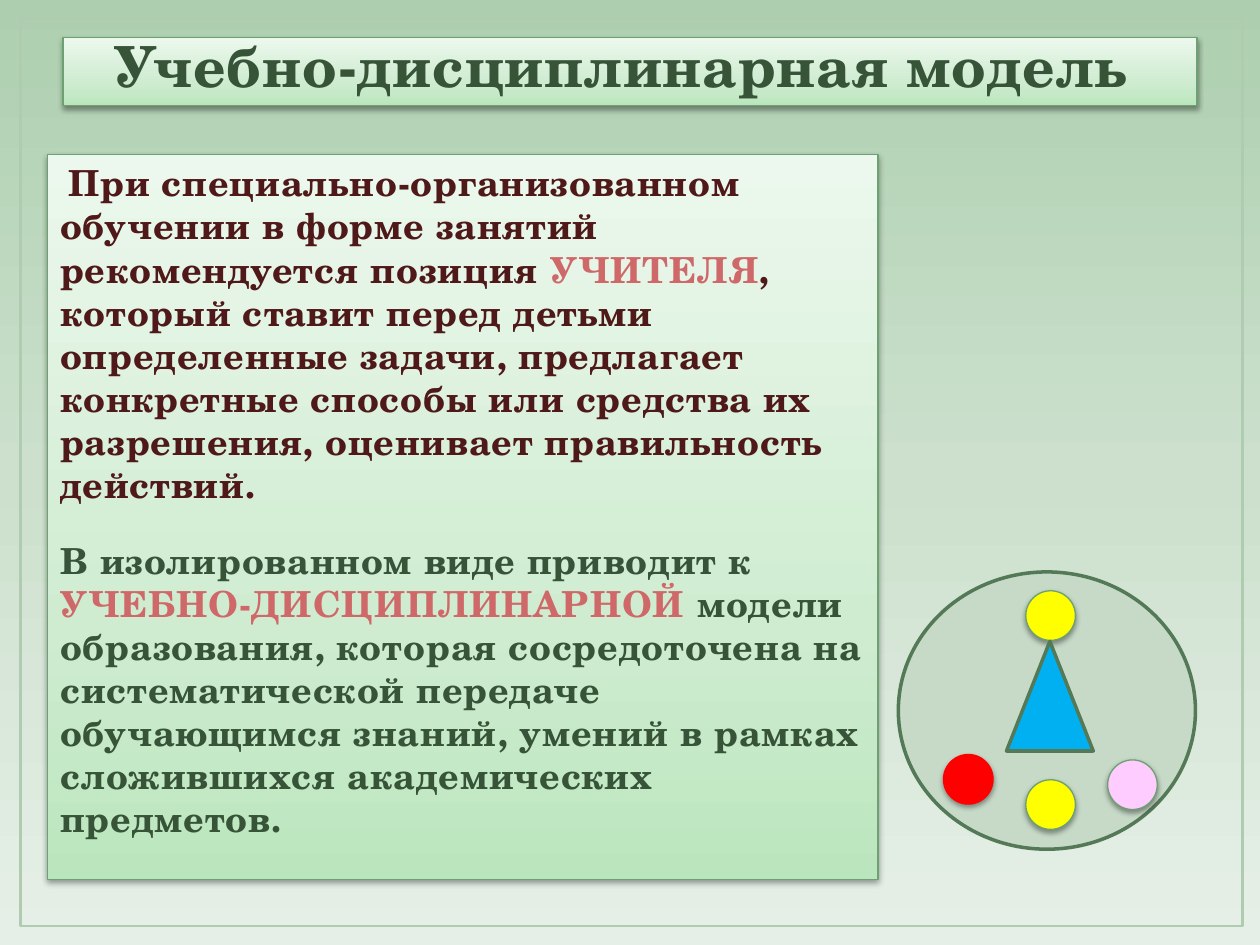
from dataclasses import dataclass

from lxml import etree
from pptx import Presentation
from pptx.dml.color import RGBColor
from pptx.enum.shapes import MSO_SHAPE
from pptx.enum.text import MSO_ANCHOR, MSO_AUTO_SIZE, PP_ALIGN
from pptx.oxml.ns import qn
from pptx.util import Cm, Pt

RECTANGLE, OVAL = MSO_SHAPE.RECTANGLE, MSO_SHAPE.OVAL
TRIANGLE, CONNECTOR = MSO_SHAPE.ISOSCELES_TRIANGLE, MSO_SHAPE.FLOWCHART_CONNECTOR
TOP, BOTTOM = MSO_ANCHOR.TOP, MSO_ANCHOR.BOTTOM
LEFT, CENTER = PP_ALIGN.LEFT, PP_ALIGN.CENTER
NO_AUTOFIT = MSO_AUTO_SIZE.NONE

FONT = "TeX Gyre Schola"
COLORS = {
    "frame": "B0CCB0", "edge": "6EA172", "dark_edge": "547957",
    "green": "375439", "maroon": "4F1919", "rose": "CF6868",
    "room": "C7DAC8", "red": "FF0000", "yellow": "FFFF00",
    "pink": "FFCCFF", "blue": "00B0F0", "shadow": "000000",
}
BACKGROUND_STOPS = ((0, "ADCFAF"), (50, "CCE0CD"), (100, "E6EFE7"))
PANEL_STOPS = ((0, "BBE6BD"), (35, "CFECD1"), (100, "ECF8ED"))


@dataclass
class Box:
    left: float
    top: float
    width: float
    height: float


@dataclass
class Figure:
    kind: int
    box: Box
    fill: str | None
    line: str
    weight: float
    shadow: bool = False


@dataclass
class TextBlock:
    runs: tuple
    size: float
    align: int = LEFT
    indent: float = 0
    space_before: float = 0


def color(name: str) -> RGBColor:
    return RGBColor.from_string(COLORS[name])


def set_gradient(fill, element, stops: tuple, angle: float) -> None:
    fill.gradient()
    fill.gradient_angle = angle
    stop_list = next(element.iter(qn("a:gsLst")))
    for stop in list(stop_list):
        stop_list.remove(stop)
    for position, value in stops:
        stop = etree.SubElement(stop_list, qn("a:gs"), pos=str(position * 1000))
        etree.SubElement(stop, qn("a:srgbClr"), val=value)


def set_line(shape, name: str, weight: float) -> None:
    shape.line.color.rgb = color(name)
    shape.line.width = Pt(weight)


def add_shadow(shape) -> None:
    shape.shadow.inherit = False
    effects = next(shape.element.iter(qn("a:effectLst")))
    outer = etree.SubElement(
        effects, qn("a:outerShdw"), blurRad=str(Pt(3.1)), dist=str(Pt(1.6)),
        dir="5400000", rotWithShape="0")
    shade = etree.SubElement(outer, qn("a:srgbClr"), val=COLORS["shadow"])
    etree.SubElement(shade, qn("a:alpha"), val="38000")


def add_figure(slide, figure: Figure) -> None:
    box = figure.box
    shape = slide.shapes.add_shape(
        figure.kind, Cm(box.left), Cm(box.top), Cm(box.width), Cm(box.height))
    if figure.fill:
        shape.fill.solid()
        shape.fill.fore_color.rgb = color(figure.fill)
    else:
        shape.fill.background()
    set_line(shape, figure.line, figure.weight)
    shape.shadow.inherit = False
    if figure.shadow:
        add_shadow(shape)


def fill_panel(shape, box: Box, anchor: int, blocks: tuple) -> None:
    shape.left, shape.top = Cm(box.left), Cm(box.top)
    shape.width, shape.height = Cm(box.width), Cm(box.height)
    set_gradient(shape.fill, shape.element, PANEL_STOPS, 90)
    set_line(shape, "edge", 0.75)
    add_shadow(shape)
    frame = shape.text_frame
    frame.word_wrap = True
    frame.auto_size = NO_AUTOFIT
    frame.vertical_anchor = anchor
    for number, block in enumerate(blocks):
        paragraph = frame.add_paragraph() if number else frame.paragraphs[0]
        paragraph.alignment = block.align
        paragraph.space_before = Pt(block.space_before)
        paragraph.font.name = FONT
        paragraph.font.size = Pt(block.size)
        paragraph.font.bold = True
        for text, name in block.runs:
            run = paragraph.add_run()
            run.text = text
            run.font.color.rgb = color(name)
    # Plain paragraphs without bullets, letters slightly spaced
    for properties, block in zip(shape.element.iter(qn("a:pPr")), blocks):
        properties.set("marL", "0")
        properties.set("indent", str(Cm(block.indent)))
        properties.insert_element_before(
            etree.Element(qn("a:buNone")), "a:tabLst", "a:defRPr", "a:extLst")
    for properties in shape.element.iter(qn("a:rPr")):
        properties.set("spc", "50")


TITLE = (TextBlock((("Учебно-дисциплинарная модель ", "green"),), 32.4, CENTER),)
BODY = (
    TextBlock((
        ("При специально-организованном обучении в форме занятий "
         "рекомендуется позиция ", "maroon"),
        ("УЧИТЕЛЯ", "rose"),
        (", который ставит перед детьми определенные задачи, предлагает "
         "конкретные способы или средства их разрешения, оценивает "
         "правильность действий.", "maroon")), 20.5, indent=0.16),
    TextBlock((("В изолированном виде приводит к", "green"),), 20.5,
              space_before=18.7),
    TextBlock((
        ("УЧЕБНО-ДИСЦИПЛИНАРНОЙ", "rose"),
        (" модели образования, которая сосредоточена на систематической "
         "передаче обучающимся знаний, умений в рамках сложившихся "
         "академических предметов.", "green")), 20.5),
)

# People around the table: left, top, fill, line
PERSON_SIZE = 1
PEOPLE = (
    (19.02, 15.21, "red", "red"),
    (20.68, 15.72, "yellow", "edge"),
    (22.33, 15.32, "pink", "edge"),
    (20.68, 11.91, "yellow", "edge"),
)
FIGURES = (
    Figure(RECTANGLE, Box(0.41, 0.38, 24.64, 18.29), None, "frame", 1.5),
    Figure(CONNECTOR, Box(18.11, 11.53, 5.99, 5.59), "room", "dark_edge", 2),
    *(Figure(OVAL, Box(left, top, PERSON_SIZE, PERSON_SIZE), fill, line, 0.75, True)
      for left, top, fill, line in PEOPLE),
    Figure(TRIANGLE, Box(20.29, 12.93, 1.75, 2.21), "blue", "dark_edge", 2),
)


def main() -> None:
    presentation = Presentation()
    presentation.slide_width, presentation.slide_height = Cm(25.4), Cm(19.05)
    slide = presentation.slides.add_slide(presentation.slide_layouts[1])
    set_gradient(slide.background.fill, slide.element, BACKGROUND_STOPS, 270)

    # Title and body panels
    fill_panel(slide.shapes.title, Box(1.27, 0.76, 22.86, 1.37), BOTTOM, TITLE)
    fill_panel(slide.placeholders[1], Box(0.96, 3.12, 16.74, 14.61), TOP, BODY)

    # Page frame and seating diagram
    for figure in FIGURES:
        add_figure(slide, figure)
    presentation.save("out.pptx")


if __name__ == "__main__":
    main()
